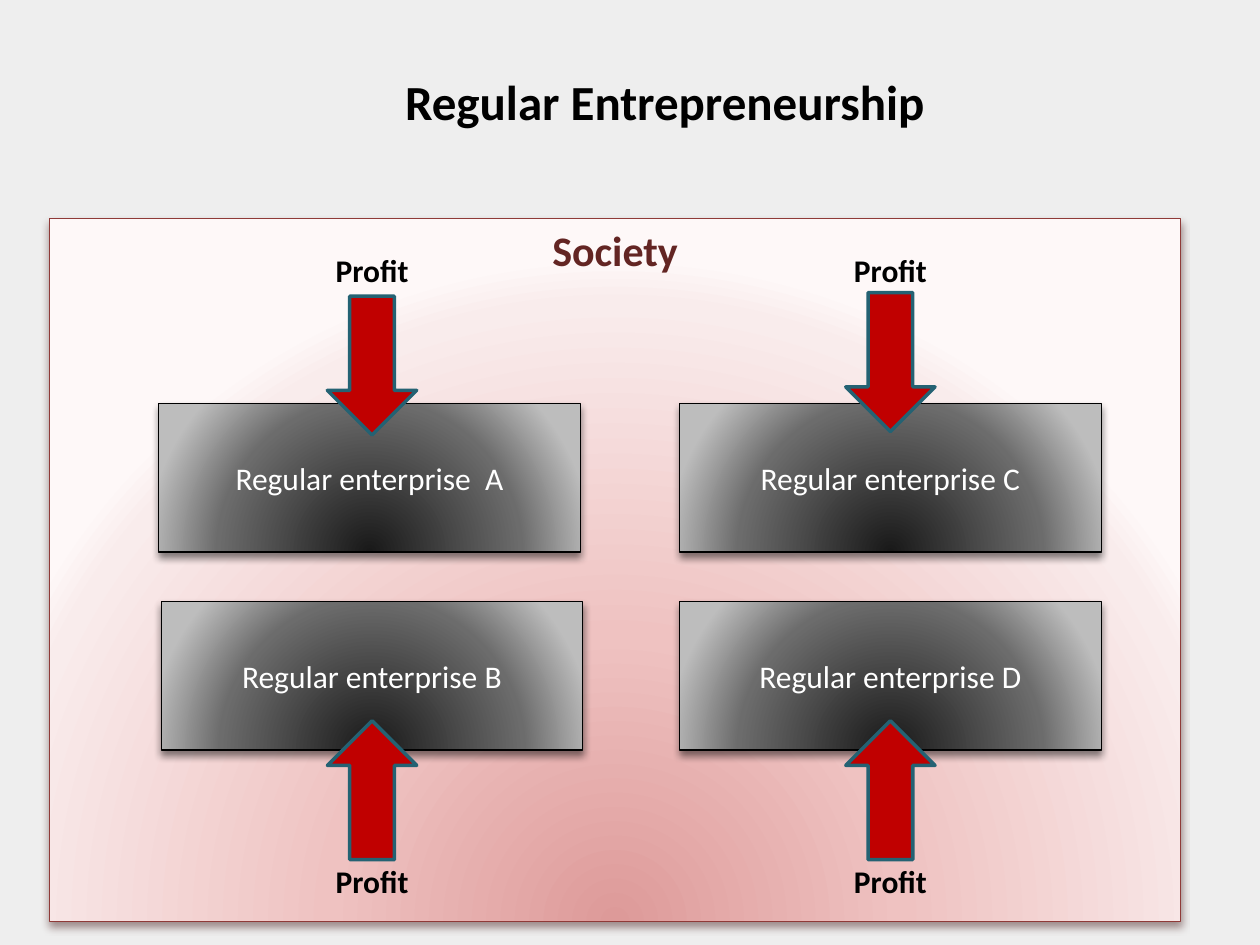
from dataclasses import dataclass

from pptx import Presentation
from pptx import util as u
from pptx.dml.color import RGBColor
from pptx.enum import shapes, text
from pptx.oxml import parse_xml
from pptx.oxml.ns import nsdecls, qn


@dataclass(frozen=True)
class Theme:
    font: str = "Calibri"
    background: str = "EEEEEE"
    ink: str = "000000"
    on_dark: str = "FFFFFF"
    society_text: str = "632523"
    society_line: str = "8F3A38"
    society_shadow: str = "441B1A"
    society_stops: tuple = ((0, "DD9A99"), (43, "EFC2C1"), (93, "F9ECEC"), (100, "FEF8F8"))
    enterprise_stops: tuple = ((0, "191919"), (68, "6C6C6C"), (100, "BDBDBD"))
    arrow_fill: str = "C00000"
    arrow_line: str = "246273"
    title_size: int = 28
    society_size: int = 24
    label_size: int = 18


class SlideBuilder:
    def __init__(self, slide, theme):
        self.slide = slide
        self.theme = theme
        slide.background.fill.solid()
        slide.background.fill.fore_color.rgb = RGBColor.from_string(theme.background)

    def set_wording(self, shape, wording, size, color, bold=False,
                    anchor=text.MSO_ANCHOR.TOP):
        frame = shape.text_frame
        frame.text = wording
        frame.word_wrap = True
        frame.vertical_anchor = anchor
        paragraph = frame.paragraphs[0]
        paragraph.alignment = text.PP_ALIGN.CENTER
        font = paragraph.runs[0].font
        font.name, font.size, font.bold = self.theme.font, u.Pt(size), bold
        font.color.rgb = RGBColor.from_string(color)

    def title(self, wording, left, top, width, height):
        title = self.slide.shapes.title
        title.left, title.top, title.width, title.height = map(u.Cm, (left, top, width, height))
        self.set_wording(title, wording, self.theme.title_size, self.theme.ink, bold=True)

    def outlined(self, preset, box, line_color, line_width):
        shape = self.slide.shapes.add_shape(preset, *map(u.Cm, box))
        shape.shadow.inherit = False
        shape.line.color.rgb = RGBColor.from_string(line_color)
        shape.line.width = u.Pt(line_width)
        return shape

    def glowing_box(self, box, stops, line_color, shadow_color):
        """Rectangle with a radial gradient rising from below and a soft shadow."""
        shape = self.outlined(shapes.MSO_SHAPE.RECTANGLE, box, line_color, 0.75)
        shape.fill.background()
        stop_xml = "".join(
            f'<a:gs pos="{position * 1000}"><a:srgbClr val="{color}"/></a:gs>'
            for position, color in stops)
        gradient = parse_xml(
            f'<a:gradFill {nsdecls("a")} rotWithShape="1"><a:gsLst>{stop_xml}</a:gsLst>'
            '<a:path path="circle"><a:fillToRect l="50000" t="130000" r="50000" b="-30000"/>'
            '</a:path></a:gradFill>')
        shadow = parse_xml(
            f'<a:outerShdw {nsdecls("a")} blurRad="{u.Pt(4.5)}" dist="{u.Pt(3)}" dir="5400000" '
            f'rotWithShape="0"><a:srgbClr val="{shadow_color}"><a:alpha val="48000"/>'
            '</a:srgbClr></a:outerShdw>')
        properties = shape._element.spPr
        properties.replace(properties.find(qn("a:noFill")), gradient)
        properties.find(qn("a:effectLst")).append(shadow)
        return shape

    def society(self, wording, box):
        theme = self.theme
        panel = self.glowing_box(box, theme.society_stops, theme.society_line,
                                 theme.society_shadow)
        self.set_wording(panel, wording, theme.society_size, theme.society_text, bold=True)

    def enterprise(self, wording, left, top):
        theme = self.theme
        block = self.glowing_box((left, top, 8.5, 3), theme.enterprise_stops,
                                 theme.ink, theme.ink)
        self.set_wording(block, wording, theme.label_size, theme.on_dark,
                         anchor=text.MSO_ANCHOR.MIDDLE)

    def profit_arrow(self, center, top, rotation):
        width = 1.8
        arrow = self.outlined(shapes.MSO_SHAPE.DOWN_ARROW,
                              (center - width / 2, top, width, 2.8),
                              self.theme.arrow_line, 2)
        arrow.fill.solid()
        arrow.fill.fore_color.rgb = RGBColor.from_string(self.theme.arrow_fill)
        arrow.rotation = rotation

    def profit_label(self, center, top):
        width = 3.4
        label = self.slide.shapes.add_textbox(
            *map(u.Cm, (center - width / 2, top, width, 1.02)))
        self.set_wording(label, "Profit", self.theme.label_size, self.theme.ink, bold=True)


def main():
    deck = Presentation()
    deck.slide_width, deck.slide_height = u.Cm(25.4), u.Cm(19.05)
    builder = SlideBuilder(deck.slides.add_slide(deck.slide_layouts[5]), Theme())

    builder.title("Regular Entrepreneurship", 5.3, 1.32, 16.2, 1.45)
    builder.society("Society", (1, 4.41, 22.8, 14.17))

    upper_row, lower_row = 8.13, 12.12
    for wording, left, top in (
        ("Regular enterprise  Α", 3.2, upper_row),
        ("Regular enterprise Β", 3.25, lower_row),
        ("Regular enterprise C", 13.7, upper_row),
        ("Regular enterprise D", 13.7, lower_row),
    ):
        builder.enterprise(wording, left, top)

    for center, upper_arrow in ((7.5, 5.97), (17.95, 5.9)):
        builder.profit_arrow(center, upper_arrow, rotation=0)
        builder.profit_arrow(center, 14.53, rotation=180)
        for label_top in (4.93, 17.25):
            builder.profit_label(center, label_top)

    deck.save("out.pptx")


if __name__ == "__main__":
    main()
